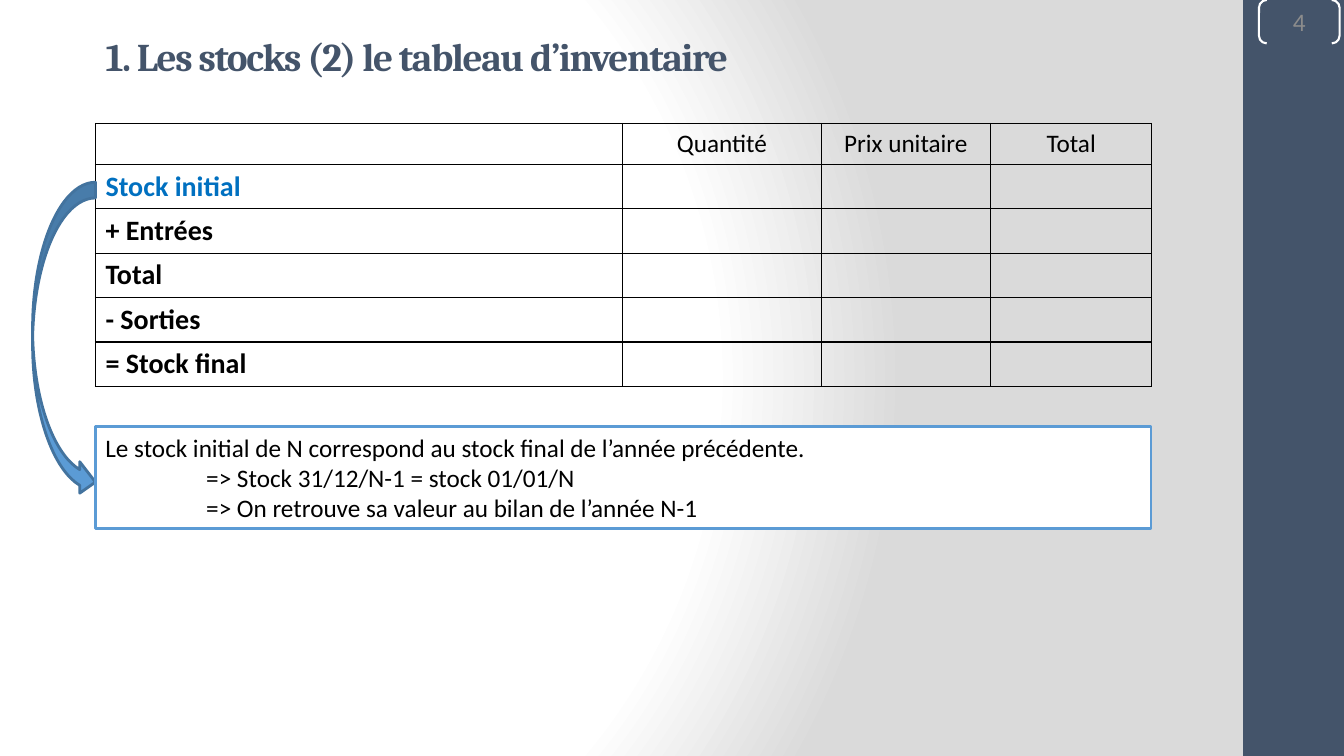
import pptx
import pptx.dml.color
import pptx.enum.shapes
import pptx.enum.text
import pptx.oxml
import pptx.oxml.ns
import pptx.util

Pt = pptx.util.Pt
SHAPES = pptx.enum.shapes.MSO_SHAPE
ALIGN = pptx.enum.text.PP_ALIGN
MIDDLE = pptx.enum.text.MSO_ANCHOR.MIDDLE
DRAWING = pptx.oxml.ns.nsdecls("a")

NAVY, BLUE, DARK_BLUE = "44546A", "5B9BD5", "43739E"
BLACK, WHITE, GREY = "000000", "FFFFFF", "8C8C8C"
LEFT, WIDTH = 68.2, 754
HEADERS = ["", "Quantité", "Prix unitaire", "Total"]
STOCK_LINES = ["Stock initial", "+ Entrées", "Total", "- Sorties", "= Stock final"]
COLUMN_WIDTHS = [376.6, 141.8, 121, 115.2]
HEADER_HEIGHT, LINE_HEIGHT = 29.2, 31.7


def color(value):
    return pptx.dml.color.RGBColor.from_string(value)


def add_run(paragraph, text, size, text_color, font="Calibri", bold=False, align=ALIGN.LEFT):
    paragraph.alignment = align
    run = paragraph.add_run()
    run.text = text
    run.font.name, run.font.size, run.font.bold = font, Pt(size), bold
    run.font.color.rgb = color(text_color)
    return run


def set_background(slide):
    """Fill the slide with a radial gradient from white to light grey."""
    slide.background.fill.solid()
    properties = slide.element.find(".//" + pptx.oxml.ns.qn("p:bgPr"))
    stops = "".join(
        f'<a:gs pos="{position * 1000}"><a:srgbClr val="{value}"/></a:gs>'
        for position, value in [(0, WHITE), (75, WHITE), (100, "DADADA")])
    properties.replace(properties[0], pptx.oxml.parse_xml(
        f'<a:gradFill {DRAWING} rotWithShape="1"><a:gsLst>{stops}</a:gsLst>'
        '<a:path path="circle"><a:fillToRect l="20000" t="50000" r="100000" b="50000"/>'
        '</a:path></a:gradFill>'))


def add_shape(slide, kind, box, fill=None, line=None, line_width=2):
    shape = slide.shapes.add_shape(kind, *map(Pt, box))
    shape.shadow.inherit = False
    if fill:
        shape.fill.solid()
        shape.fill.fore_color.rgb = color(fill)
    else:
        shape.fill.background()
    if line:
        shape.line.color.rgb = color(line)
        shape.line.width = Pt(line_width)
    else:
        shape.line.fill.background()
    return shape


def set_title(slide, text):
    title = slide.shapes.title
    title.left, title.top, title.width, title.height = map(Pt, (LEFT, 17.3, 600, 44.6))
    title.text_frame.vertical_anchor = MIDDLE
    run = add_run(title.text_frame.paragraphs[0], text, 28, NAVY, "Cambria", True)
    run.font._element.set("spc", "-100")


def add_page_number(slide, number):
    bracket = add_shape(slide, SHAPES.DOUBLE_BRACKET, (899.3, 0, 57.6, 31), None, WHITE, 1.5)
    bracket.adjustments[0] = 0.179
    frame = bracket.text_frame
    frame.margin_left = frame.margin_top = frame.margin_right = frame.margin_bottom = 0
    frame.vertical_anchor = MIDDLE
    add_run(frame.paragraphs[0], number, 18, GREY, align=ALIGN.CENTER)


def format_cell(cell):
    """Clear the fill and draw a thin black border on every side."""
    cell.fill.background()
    properties = cell._tc.get_or_add_tcPr()
    for index, side in enumerate("LRTB"):
        properties.insert(index, pptx.oxml.parse_xml(
            f'<a:ln{side} {DRAWING} w="{Pt(1)}"><a:solidFill>'
            f'<a:srgbClr val="{BLACK}"/></a:solidFill></a:ln{side}>'))


def add_inventory_table(slide):
    height = HEADER_HEIGHT + LINE_HEIGHT * len(STOCK_LINES)
    table = slide.shapes.add_table(
        len(STOCK_LINES) + 1, len(HEADERS), Pt(LEFT), Pt(88.2), Pt(WIDTH), Pt(height)).table
    table.first_row = table.horz_banding = False
    for column, width in zip(table.columns, COLUMN_WIDTHS):
        column.width = Pt(width)
    for index, row in enumerate(table.rows):
        row.height = Pt(LINE_HEIGHT if index else HEADER_HEIGHT)
    for cell in table.iter_cells():
        format_cell(cell)
    for index, text in enumerate(HEADERS):
        if text:
            add_run(table.cell(0, index).text_frame.paragraphs[0], text, 18, BLACK,
                    align=ALIGN.CENTER)
    for index, text in enumerate(STOCK_LINES, 1):
        add_run(table.cell(index, 0).text_frame.paragraphs[0], text, 20,
                "0070C0" if index == 1 else BLACK, bold=True)


def add_explanation(slide, statement, consequences):
    box = add_shape(slide, SHAPES.RECTANGLE, (LEFT, 304.6, WIDTH, 72.7), WHITE, BLUE)
    frame = box.text_frame
    frame.word_wrap = True
    frame.vertical_anchor = MIDDLE
    add_run(frame.paragraphs[0], statement, 18, BLACK)
    for text in consequences:
        paragraph = frame.add_paragraph()
        paragraph._p.get_or_add_pPr().set("marL", str(Pt(72)))
        add_run(paragraph, text, 18, BLACK)


def main():
    presentation = pptx.Presentation()
    presentation.slide_width, presentation.slide_height = Pt(960), Pt(540)
    slide = presentation.slides.add_slide(presentation.slide_layouts[5])
    set_background(slide)
    add_shape(slide, SHAPES.RECTANGLE, (888, 0, 72, 540), NAVY)
    add_page_number(slide, "4")
    set_title(slide, "1. Les stocks (2) le tableau d’inventaire")
    add_inventory_table(slide)
    add_shape(slide, SHAPES.CURVED_RIGHT_ARROW, (23.3, 130.2, 44.9, 225.4), BLUE, DARK_BLUE)
    add_explanation(
        slide,
        "Le stock initial de N correspond au stock final de l’année précédente.",
        ["=> Stock 31/12/N-1 = stock 01/01/N",
         "=> On retrouve sa valeur au bilan de l’année N-1"])
    presentation.save("out.pptx")


if __name__ == "__main__":
    main()
